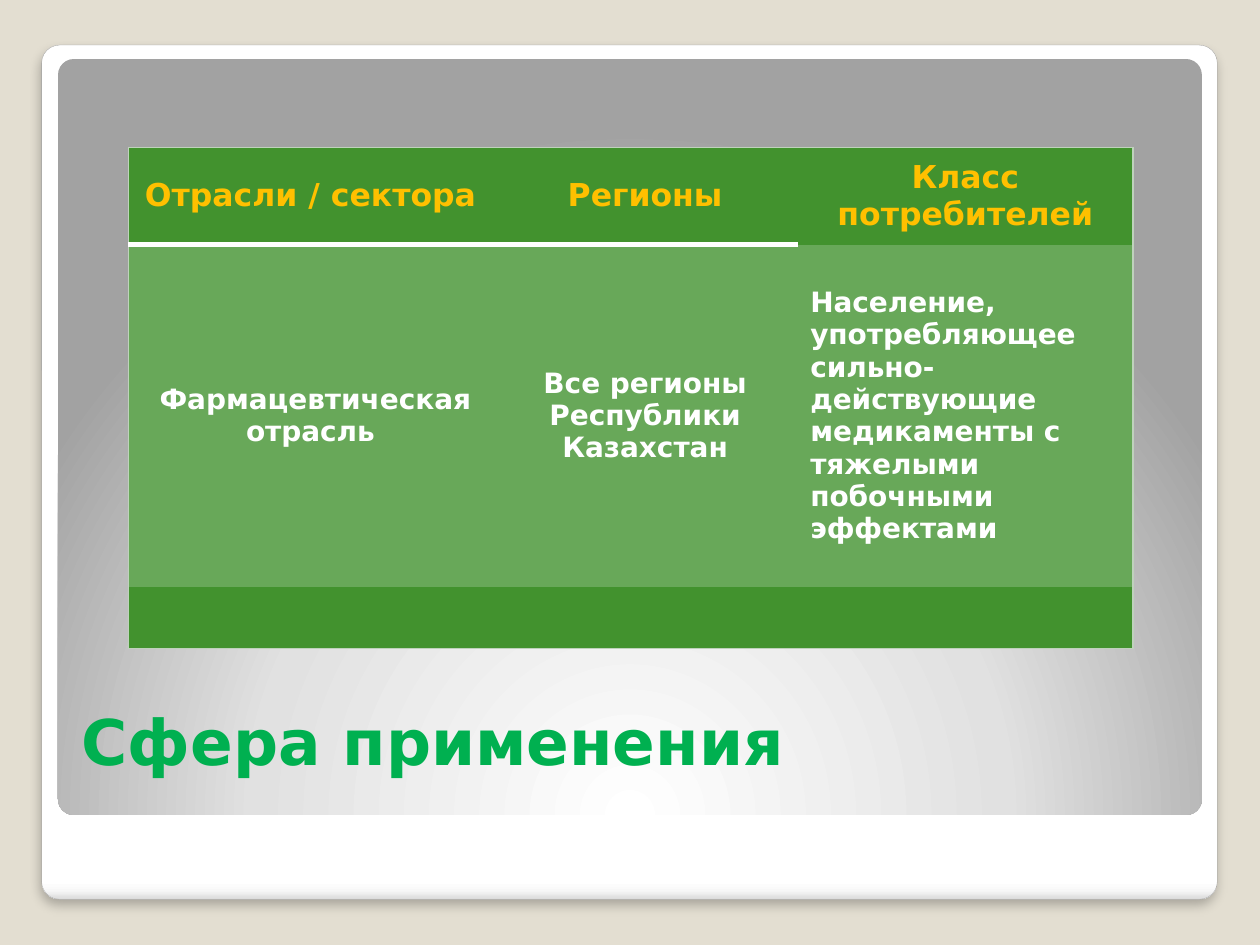
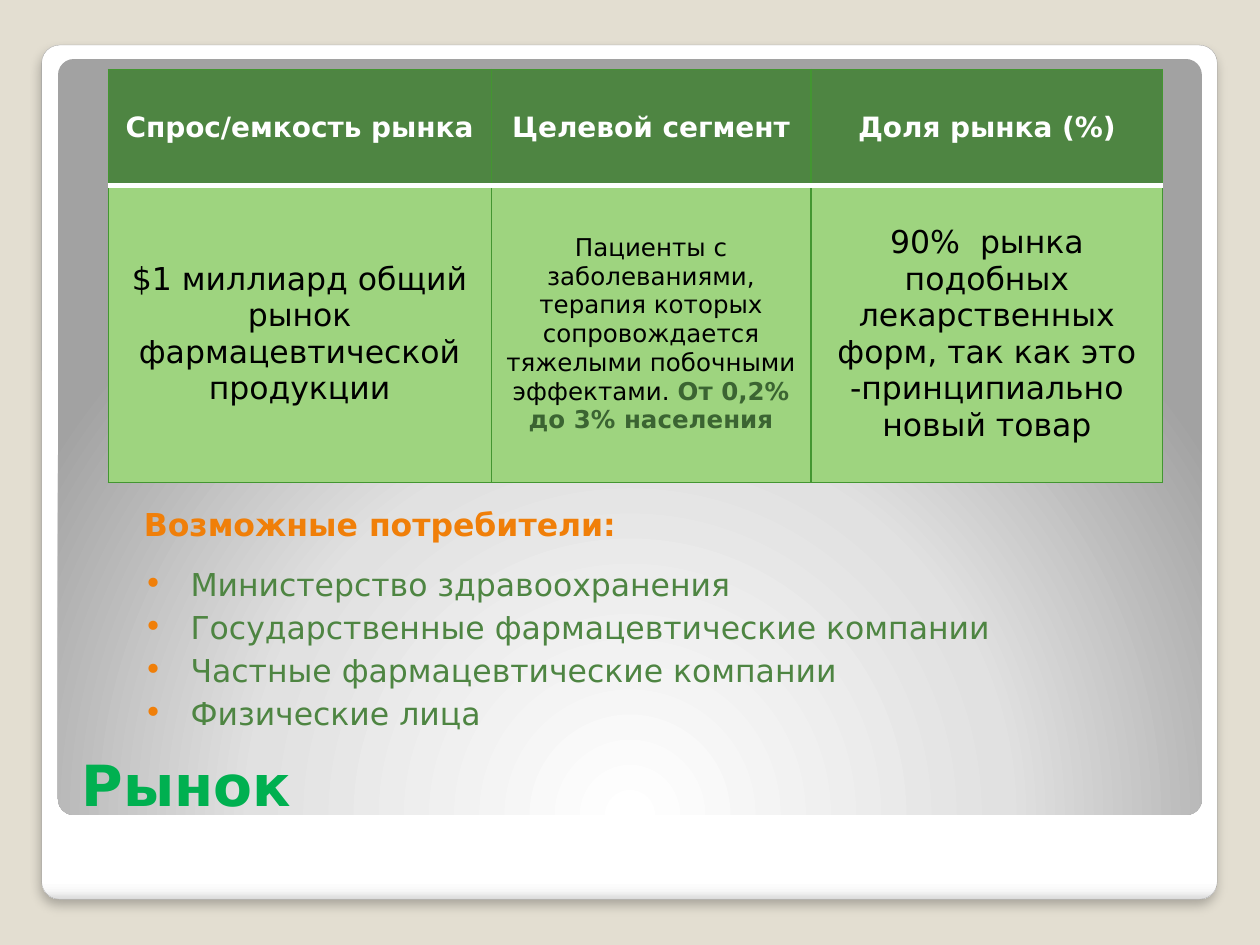
from lxml.etree import SubElement
from pptx import Presentation
from pptx.dml.color import RGBColor
from pptx.enum.shapes import MSO_SHAPE as Shape
from pptx.enum.text import MSO_ANCHOR as Anchor, PP_ALIGN as Align
from pptx.oxml import parse_xml
from pptx.oxml.ns import nsdecls, qn
from pptx.util import Cm, Pt

FONT = "DejaVu Sans"
WHITE = RGBColor(0xFF, 0xFF, 0xFF)
BLACK = RGBColor(0, 0, 0)
SAND = RGBColor(0xE3, 0xDE, 0xD1)
FRAME_LINE = RGBColor(0xA4, 0xA4, 0xA4)
TITLE_GREEN = RGBColor(0x00, 0xB0, 0x50)
GOLD = RGBColor(0xFF, 0xC0, 0x00)
ORANGE = RGBColor(0xF0, 0x7F, 0x09)
GREEN = RGBColor(0x42, 0x92, 0x2E)
SOFT_GREEN = RGBColor(0x68, 0xA8, 0x59)
PALE_EDGE = RGBColor(0xBF, 0xD2, 0xBC)
FOREST = RGBColor(0x4E, 0x85, 0x42)
DARK_FOREST = RGBColor(0x3B, 0x64, 0x32)
LIME = RGBColor(0x9E, 0xD4, 0x7F)
GRID_GREEN = RGBColor(0x43, 0x96, 0x31)

NO_STYLE = "{2D5ABB26-0587-4C30-8999-92F81FD0307C}"
FRAME_STOPS = [(0, WHITE), (98, WHITE), (99, RGBColor(0xF7, 0xF7, 0xF7)),
               (100, RGBColor(0xDA, 0xDA, 0xDA))]
PANEL_STOPS = [(0, WHITE), (55, RGBColor(0xE1, 0xE1, 0xE1)),
               (100, RGBColor(0xA2, 0xA2, 0xA2))]
DOWNWARD = '<a:lin ang="5400000" scaled="0"/>'
FROM_BELOW = ('<a:path path="circle"><a:fillToRect l="50000" t="175000" '
              'r="50000" b="-75000"/></a:path>')


def text_format(size, color, bold=False):
    return {"name": FONT, "size": Pt(size), "bold": bold, "color": color}


def set_attributes(target, values):
    for name, value in values.items():
        if name == "color":
            target.color.rgb = value
        else:
            setattr(target, name, value)


class Deck:
    """Holds the shared style and the slide being built."""

    def __init__(self):
        self.presentation = Presentation()
        self.presentation.slide_width = Cm(25.4)
        self.presentation.slide_height = Cm(19.05)
        self.slide = None

    def add_slide(self):
        self.slide = self.presentation.slides.add_slide(
            self.presentation.slide_layouts[6])
        background = self.slide.background.fill
        background.solid()
        background.fore_color.rgb = SAND
        frame = self.rounded_panel((0.84, 0.91, 23.7, 17.22), FRAME_STOPS, DOWNWARD)
        frame.line.color.rgb = FRAME_LINE
        frame.line.width = Pt(0.16)
        self.soft_shadow(frame)
        panel = self.rounded_panel((1.17, 1.19, 23.06, 15.24), PANEL_STOPS, FROM_BELOW)
        panel.line.fill.background()

    def rounded_panel(self, box, stops, direction):
        shape = self.slide.shapes.add_shape(
            Shape.ROUNDED_RECTANGLE, *(Cm(length) for length in box))
        shape.adjustments[0] = 0.021
        shape.shadow.inherit = False
        stop_xml = "".join(
            f'<a:gs pos="{position * 1000}"><a:srgbClr val="{color}"/></a:gs>'
            for position, color in stops)
        gradient = parse_xml(
            f'<a:gradFill {nsdecls("a")} rotWithShape="1">'
            f'<a:gsLst>{stop_xml}</a:gsLst>{direction}</a:gradFill>')
        shape._element.spPr.find(qn("a:prstGeom")).addnext(gradient)
        return shape

    def soft_shadow(self, shape):
        effects = shape._element.spPr.find(qn("a:effectLst"))
        effects.append(parse_xml(
            f'<a:outerShdw {nsdecls("a")} blurRad="{Pt(6)}" dist="{Pt(4)}" '
            'dir="5400000" algn="t" rotWithShape="0"><a:srgbClr val="000000">'
            '<a:alpha val="25000"/></a:srgbClr></a:outerShdw>'))

    def text_box(self, box, margins=(0.25, 0.13, 0.25, 0.13), anchor=Anchor.TOP):
        frame = self.slide.shapes.add_textbox(*(Cm(length) for length in box)).text_frame
        sides = ("margin_left", "margin_top", "margin_right", "margin_bottom")
        set_attributes(frame, {"word_wrap": True, "vertical_anchor": anchor,
                               **dict(zip(sides, map(Cm, margins)))})
        return frame

    def add_runs(self, paragraph, *runs):
        """Add (text, format) runs to a paragraph."""
        for text, values in runs:
            run = paragraph.add_run()
            run.text = text
            set_attributes(run.font, values)

    def title(self, text, top, height, size):
        frame = self.text_box((1.4, top, 22.73, height), anchor=Anchor.BOTTOM)
        self.add_runs(frame.paragraphs[0], (text, text_format(size, TITLE_GREEN, True)))

    def bullet(self, paragraph, color):
        properties = paragraph._p.get_or_add_pPr()
        properties.set("marL", str(Cm(0.74)))
        properties.set("indent", str(-Cm(0.74)))
        bullet_color = SubElement(properties, qn("a:buClr"))
        SubElement(bullet_color, qn("a:srgbClr"), val=str(color))
        SubElement(properties, qn("a:buFont"), typeface=FONT)
        SubElement(properties, qn("a:buChar"), char="•")

    def bullet_list(self, box, heading, items):
        frame = self.text_box(box, margins=(0.51, 0.25, 0.25, 0.13))
        self.add_runs(frame.paragraphs[0], (heading, text_format(18, ORANGE, True)))
        for index, item in enumerate(items):
            paragraph = frame.add_paragraph()
            paragraph.space_before = Pt(3 if index else 12.5)
            self.bullet(paragraph, ORANGE)
            self.add_runs(paragraph, (" " + item, text_format(18, FOREST)))

    def table(self, left, top, widths, heights):
        table = self.slide.shapes.add_table(
            len(heights), len(widths), Cm(left), Cm(top),
            Cm(sum(widths)), Cm(sum(heights))).table
        table._tbl.tblPr.find(qn("a:tableStyleId")).text = NO_STYLE
        set_attributes(table, {"first_row": False, "horz_banding": False})
        for column, width in zip(table.columns, widths):
            column.width = Cm(width)
        for row, height in zip(table.rows, heights):
            row.height = Cm(height)
        return table

    def cell(self, cell, runs, fill, borders, align=Align.CENTER):
        """Fill a cell; borders maps a side (L, R, T, B) to (color, points)."""
        cell.vertical_anchor = Anchor.MIDDLE
        paragraph = cell.text_frame.paragraphs[0]
        paragraph.alignment = align
        self.add_runs(paragraph, *runs)
        cell.fill.solid()
        cell.fill.fore_color.rgb = fill
        sides = [side for side in "LRTB" if side in borders]
        for index, side in enumerate(sides):
            color, points = borders[side]
            cell._tc.get_or_add_tcPr().insert(index, parse_xml(
                f'<a:ln{side} {nsdecls("a")} w="{Pt(points)}"><a:solidFill>'
                f'<a:srgbClr val="{color}"/></a:solidFill></a:ln{side}>'))


def build_application_slide(deck):
    deck.add_slide()
    deck.title("Сфера применения", 13.89, 1.93, 36)
    header = text_format(18, GOLD, True)
    body = text_format(16, WHITE, True)
    rows = [
        (GREEN, header, ["Отрасли / сектора", "Регионы", "Класс потребителей"]),
        (SOFT_GREEN, body, [
            " Фармацевтическая отрасль", "Все регионы Республики Казахстан",
            "Население, употребляющее сильно-действующие медикаменты "
            "с тяжелыми побочными эффектами"]),
        (GREEN, body, ["", "", ""]),
    ]
    table = deck.table(2.59, 2.97, (7.34, 6.15, 6.76), (1.96, 6.91, 1.24))
    edge = (PALE_EDGE, 0.75)
    last = 2
    for r, (fill, values, texts) in enumerate(rows):
        for c, text in enumerate(texts):
            outer = {"L": c == 0, "R": c == last, "T": r == 0, "B": r == last}
            borders = {side: edge for side, shown in outer.items() if shown}
            if r == 0 and c < last:
                borders["B"] = (WHITE, 3)
            align = Align.LEFT if (r, c) == (1, last) else Align.CENTER
            runs = [(text, values)] if text else []
            deck.cell(table.cell(r, c), runs, fill, borders, align)


def build_market_slide(deck):
    deck.add_slide()
    deck.title("Рынок", 14.88, 1.73, 32.4)
    deck.bullet_list((2.39, 9.93, 21.03, 5.36), "Возможные потребители:", [
        "Министерство здравоохранения",
        "Государственные фармацевтические компании",
        "Частные фармацевтические компании",
        "Физические лица"])
    header = text_format(16, WHITE, True)
    large = text_format(18, BLACK)
    rows = [
        (FOREST, [[(text, header)] for text in
                  ("Спрос/емкость рынка", "Целевой сегмент", "Доля рынка (%)")]),
        (LIME, [
            [("$1 миллиард общий рынок фармацевтической продукции", large)],
            [("Пациенты с заболеваниями, терапия которых сопровождается "
              "тяжелыми побочными эффектами. ", text_format(14, BLACK)),
             ("От 0,2% до 3% населения", text_format(14, DARK_FOREST, True))],
            [("90%  рынка подобных лекарственных форм, так как это "
              "-принципиально новый товар", large)]]),
    ]
    table = deck.table(2.18, 1.4, (7.72, 6.45, 7.09), (2.34, 5.99))
    grid = dict.fromkeys("LRTB", (GRID_GREEN, 0.75))
    divider = (WHITE, 3.35)
    for r, (fill, cells) in enumerate(rows):
        borders = {**grid, ("T" if r else "B"): divider}
        for c, runs in enumerate(cells):
            deck.cell(table.cell(r, c), runs, fill, borders)


def main():
    deck = Deck()
    build_application_slide(deck)
    build_market_slide(deck)
    deck.presentation.save("out.pptx")


if __name__ == "__main__":
    main()
